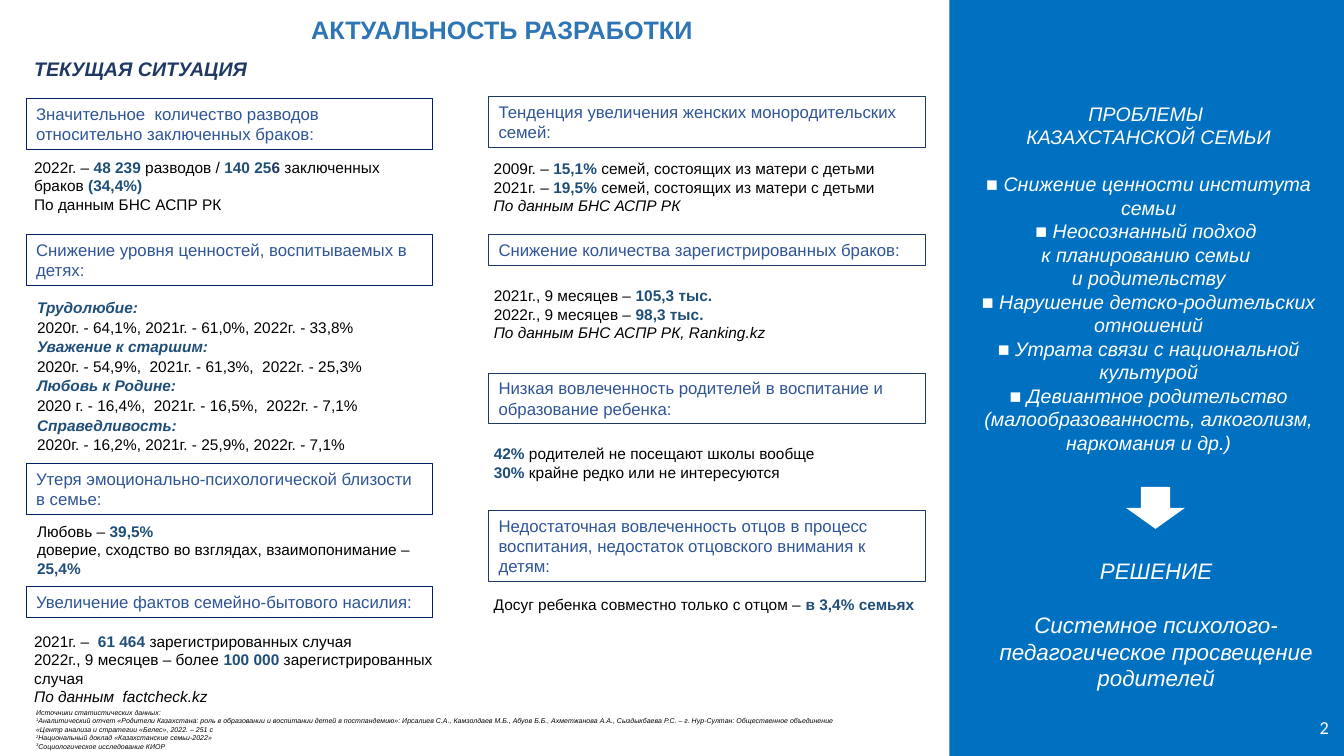
from pptx import Presentation
from pptx.dml.color import RGBColor
from pptx.enum.shapes import MSO_SHAPE
from pptx.enum.text import MSO_ANCHOR, MSO_AUTO_SIZE, PP_ALIGN
from pptx.util import Pt

COLORS = {
    "white": "FFFFFF", "black": "000000", "panel": "0070C0",
    "title": "2E75B6", "navy": "203864", "heading": "2F5597",
    "figure": "1F4E79", "left_line": "002060", "right_line": "203864",
}

# Run styles: colour, bold, italic, superscript
STYLES = {
    "plain": ("black", False, False, False),
    "note": ("black", False, True, False),
    "sup": ("black", False, True, True),
    "figure": ("figure", True, False, False),
    "value": ("figure", True, True, False),
    "navy": ("navy", True, False, False),
    "heading": ("heading", False, False, False),
    "title": ("title", True, False, False),
    "subtitle": ("navy", True, True, False),
    "panel": ("white", False, True, False),
    "mark": ("white", False, False, False),
}

LEFT_HEADINGS = [
    (70.4, 36.3, "Значительное  количество разводов относительно заключенных браков:"),
    (167.6, 36.3, "Снижение уровня ценностей, воспитываемых в детях:"),
    (331, 36.3, "Утеря эмоционально-психологической близости в семье:"),
    (419, 21.8, "Увеличение фактов семейно-бытового насилия:"),
]
RIGHT_HEADINGS = [
    (69, 36.3, "Тенденция увеличения женских монородительских семей:"),
    (167.6, 21.8, "Снижение количества зарегистрированных браков:"),
    (266.5, 36.3, "Низкая вовлеченность родителей в воспитание и образование ребенка:"),
    (364.7, 50.9, "Недостаточная вовлеченность отцов в процесс воспитания, "
                  "недостаток отцовского внимания к детям:"),
]

DIVORCES = [
    [("2022г. – ", "plain"), ("48 239 ", "figure"), ("разводов / ", "plain"),
     ("140 25", "figure"), ("6 ", "navy"), ("заключенных браков ", "plain"),
     ("(34,4%)", "figure")],
    [("По данным БНС АСПР РК", "plain")],
]
CHILD_VALUES = [
    ("Трудолюбие:", "2020г. - 64,1%, 2021г. - 61,0%, 2022г. - 33,8%"),
    ("Уважение к старшим:", "2020г. - 54,9%,  2021г. - 61,3%,  2022г. - 25,3%"),
    ("Любовь к Родине:", "2020 г. - 16,4%,  2021г. - 16,5%,  2022г. - 7,1%"),
    ("Справедливость:", "2020г. - 16,2%, 2021г. - 25,9%, 2022г. - 7,1%"),
]
CLOSENESS = [
    [("Любовь – ", "plain"), ("39,5%", "figure")],
    [("доверие, сходство во взглядах, взаимопонимание – ", "plain"), ("25,4%", "figure")],
]
VIOLENCE = [
    [("2021г. –  ", "plain"), ("61 464 ", "figure"), ("зарегистрированных случая", "plain")],
    [("2022г., 9 месяцев – более ", "plain"), ("100 000 ", "figure"),
     ("зарегистрированных случая", "plain")],
    [("По данным  factcheck.kz", "note")],
]
SINGLE_MOTHERS = [
    [(f"{year}г. – ", "plain"), (share, "figure"),
     (" семей, состоящих из матери с детьми", "plain")]
    for year, share in [(2009, "15,1%"), (2021, "19,5%")]
] + [[("По данным БНС АСПР РК", "note")]]
MARRIAGES = [
    [(f"{year}г., 9 месяцев – ", "plain"), (count, "figure")]
    for year, count in [(2021, "105,3 тыс."), (2022, "98,3 тыс.")]
] + [[("По данным БНС АСПР РК, Ranking.kz", "note")]]
SCHOOL = [
    [("42% ", "figure"), ("родителей не посещают школы вообще ", "plain")],
    [("30%", "figure"), (" крайне редко или не интересуются", "plain")],
]
FATHERS = [[("Досуг ребенка совместно только с отцом – ", "plain"), ("в 3,4% семьях", "figure")]]
SOURCES = [
    "Аналитический отчет «Родители Казахстана: роль в образовании и воспитании детей "
    "в постпандемию»: Ирсалиев С.А., Камзолдаев М.Б., Абуов Б.Б., Ахметжанова А.А., "
    "Сыздыкбаева Р.С. – г. Нур-Султан: Общественное объединение "
    "«Центр анализа и стратегии «Белес», 2022. – 251 с",
    "Национальный доклад «Казахстанские семьи-2022»",
    "Социологическое исследование КИОР",
]
PROBLEMS = [
    ["Снижение ценности института семьи"],
    ["Неосознанный подход ", "к планированию семьи ", "и родительству"],
    ["Нарушение детско-родительских отношений"],
    ["Утрата связи с национальной культурой"],
    ["Девиантное родительство (малообразованность, алкоголизм, наркомания и др.)"],
]


def rgb(name):
    return RGBColor.from_string(COLORS[name])


def fill_text(tf, paragraphs, size, align=PP_ALIGN.LEFT, font="Arial",
              spacing=None, gaps=None):
    """Write paragraphs of (text, style) runs; gaps maps index to space before."""
    tf.word_wrap = True
    tf.vertical_anchor = MSO_ANCHOR.TOP
    for i, runs in enumerate(paragraphs):
        p = tf.add_paragraph() if i else tf.paragraphs[0]
        p.alignment = align
        if spacing:
            p.line_spacing = spacing
        if gaps and i in gaps:
            p.space_before = Pt(gaps[i])
        for text, style in runs:
            color, bold, italic, superscript = STYLES[style]
            r = p.add_run()
            r.text = text
            r.font.name, r.font.size = font, Pt(size)
            r.font.bold, r.font.italic = bold, italic
            r.font.color.rgb = rgb(color)
            if superscript:
                r._r.get_or_add_rPr().set("baseline", "30000")


def add_text(s, x, y, w, h, paragraphs, size, **options):
    tf = s.shapes.add_textbox(Pt(x), Pt(y), Pt(w), Pt(h)).text_frame
    fill_text(tf, paragraphs, size, **options)
    tf.auto_size = MSO_AUTO_SIZE.SHAPE_TO_FIT_TEXT
    return tf


def add_block(s, kind, x, y, w, h, fill=None, line=None):
    sp = s.shapes.add_shape(kind, Pt(x), Pt(y), Pt(w), Pt(h))
    sp.shadow.inherit = False
    if fill:
        sp.fill.solid()
        sp.fill.fore_color.rgb = rgb(fill)
    else:
        sp.fill.background()
    if line:
        sp.line.color.rgb = rgb(line)
        sp.line.width = Pt(0.75)
    else:
        sp.line.fill.background()
    return sp


def add_headings(s, x, w, headings, line):
    for y, h, text in headings:
        sp = add_block(s, MSO_SHAPE.RECTANGLE, x, y, w, h, line=line)
        fill_text(sp.text_frame, [[(text, "heading")]], 12)
        sp.text_frame.auto_size = MSO_AUTO_SIZE.SHAPE_TO_FIT_TEXT


def add_panel(s):
    add_block(s, MSO_SHAPE.RECTANGLE, 678.2, 0, 281.8, 540, fill="panel")
    paragraphs = [[("ПРОБЛЕМЫ ", "panel")], [("КАЗАХСТАНСКОЙ СЕМЬИ", "panel")]]
    for first, *rest in PROBLEMS:
        paragraphs.append([("■ ", "mark"), (first, "panel")])
        paragraphs += [[(text, "panel")] for text in rest]
    add_text(s, 684, 69.1, 273, 262, paragraphs, 14, align=PP_ALIGN.CENTER, gaps={2: 16.5})
    add_block(s, MSO_SHAPE.DOWN_ARROW, 804.4, 347.8, 42, 30, fill="white")
    solution = ["РЕШЕНИЕ", "Системное психолого-педагогическое просвещение родителей"]
    add_text(s, 702, 394.6, 247.7, 104.4, [[(text, "panel")] for text in solution], 16,
             align=PP_ALIGN.CENTER, gaps={1: 19})
    tf = add_text(s, 898.6, 499, 57.6, 41, [[("2", "mark")]], 13,
                  align=PP_ALIGN.RIGHT, font="Calibri")
    tf.auto_size = MSO_AUTO_SIZE.NONE
    tf.vertical_anchor = MSO_ANCHOR.MIDDLE


def main():
    prs = Presentation()
    prs.slide_width, prs.slide_height = Pt(960), Pt(540)
    s = prs.slides.add_slide(prs.slide_layouts[6])

    add_panel(s)
    add_text(s, 90.7, 6.5, 535.7, 29, [[("АКТУАЛЬНОСТЬ РАЗРАБОТКИ", "title")]], 18,
             align=PP_ALIGN.CENTER)
    add_text(s, 17.3, 37.4, 311, 24.5, [[("ТЕКУЩАЯ СИТУАЦИЯ", "subtitle")]], 14)

    add_headings(s, 18.7, 290.5, LEFT_HEADINGS, "left_line")
    add_headings(s, 349, 312, RIGHT_HEADINGS, "right_line")

    add_text(s, 17.3, 109.4, 278.6, 47.5, DIVORCES, 11)
    values = [[run] for name, shares in CHILD_VALUES
              for run in ((name, "value"), (shares, "plain"))]
    add_text(s, 19.4, 208.8, 276.5, 120.2, values, 11, spacing=1.06)
    add_text(s, 19.4, 369.4, 290.2, 47.5, CLOSENESS, 11)
    add_text(s, 17.3, 447.8, 328.3, 60.5, VIOLENCE, 11)

    add_text(s, 345.6, 110.2, 314.6, 47.5, SINGLE_MOTHERS, 11)
    add_text(s, 345.6, 200.9, 291.6, 47.5, MARRIAGES, 11)
    add_text(s, 345.6, 313.9, 272.2, 33.8, SCHOOL, 11, align=PP_ALIGN.JUSTIFY)
    add_text(s, 345.6, 421.9, 321.1, 28, FATHERS, 11)

    sources = [[("Источники статистических данных:", "note")]]
    sources += [[(str(n), "sup"), (text, "note")] for n, text in enumerate(SOURCES, 1)]
    add_text(s, 18.7, 502.6, 586.8, 37.4, sources, 5)

    prs.save("out.pptx")


if __name__ == "__main__":
    main()
